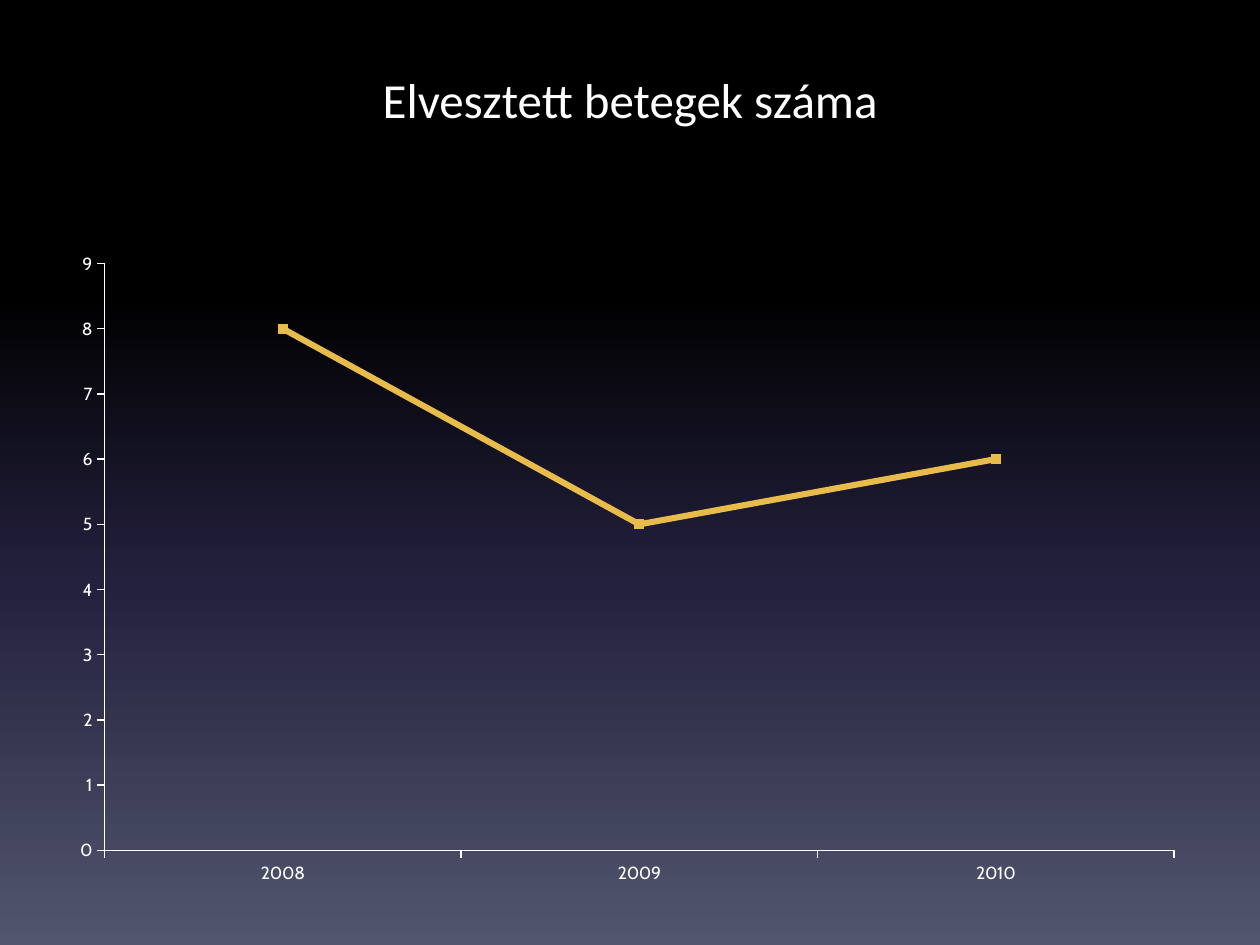
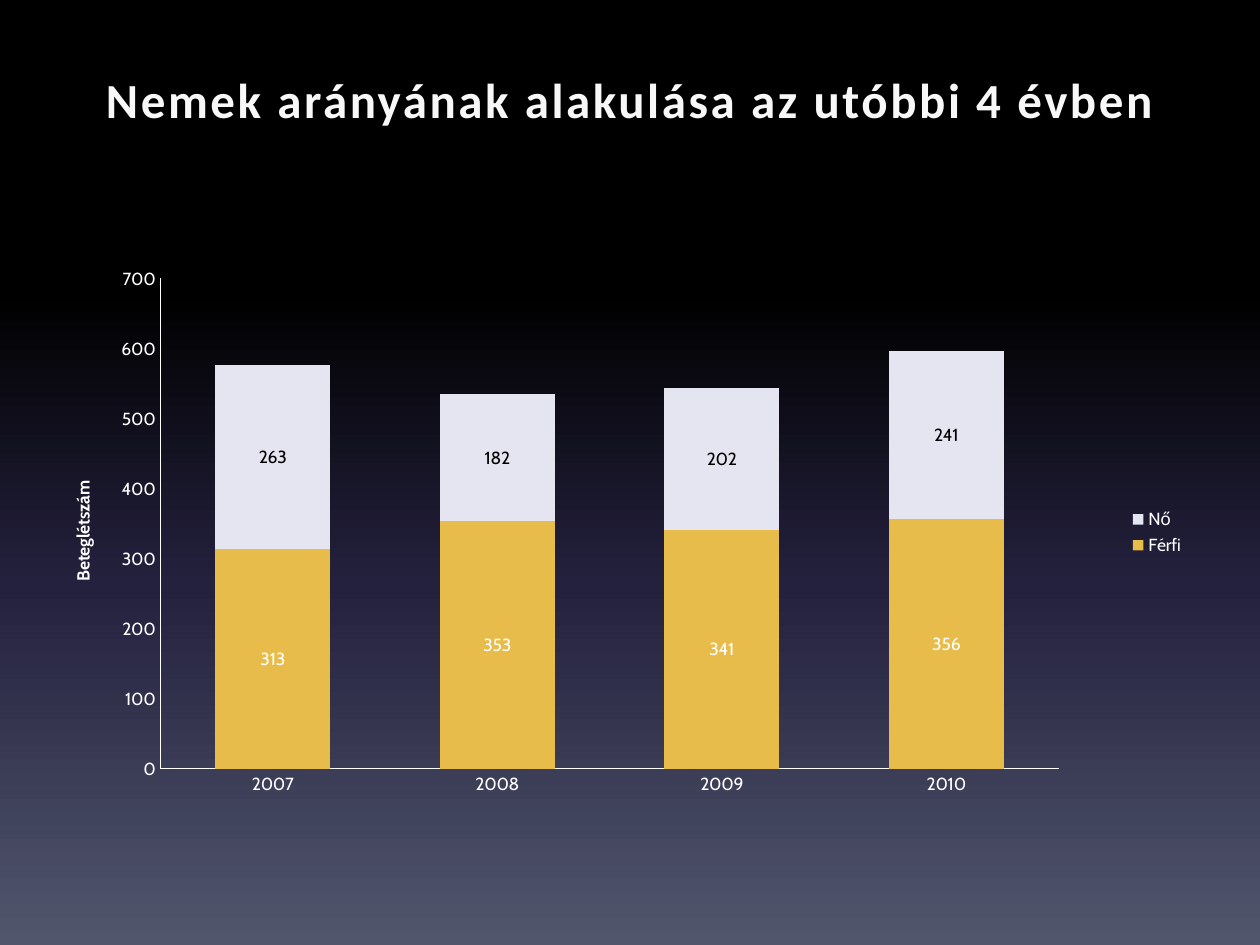
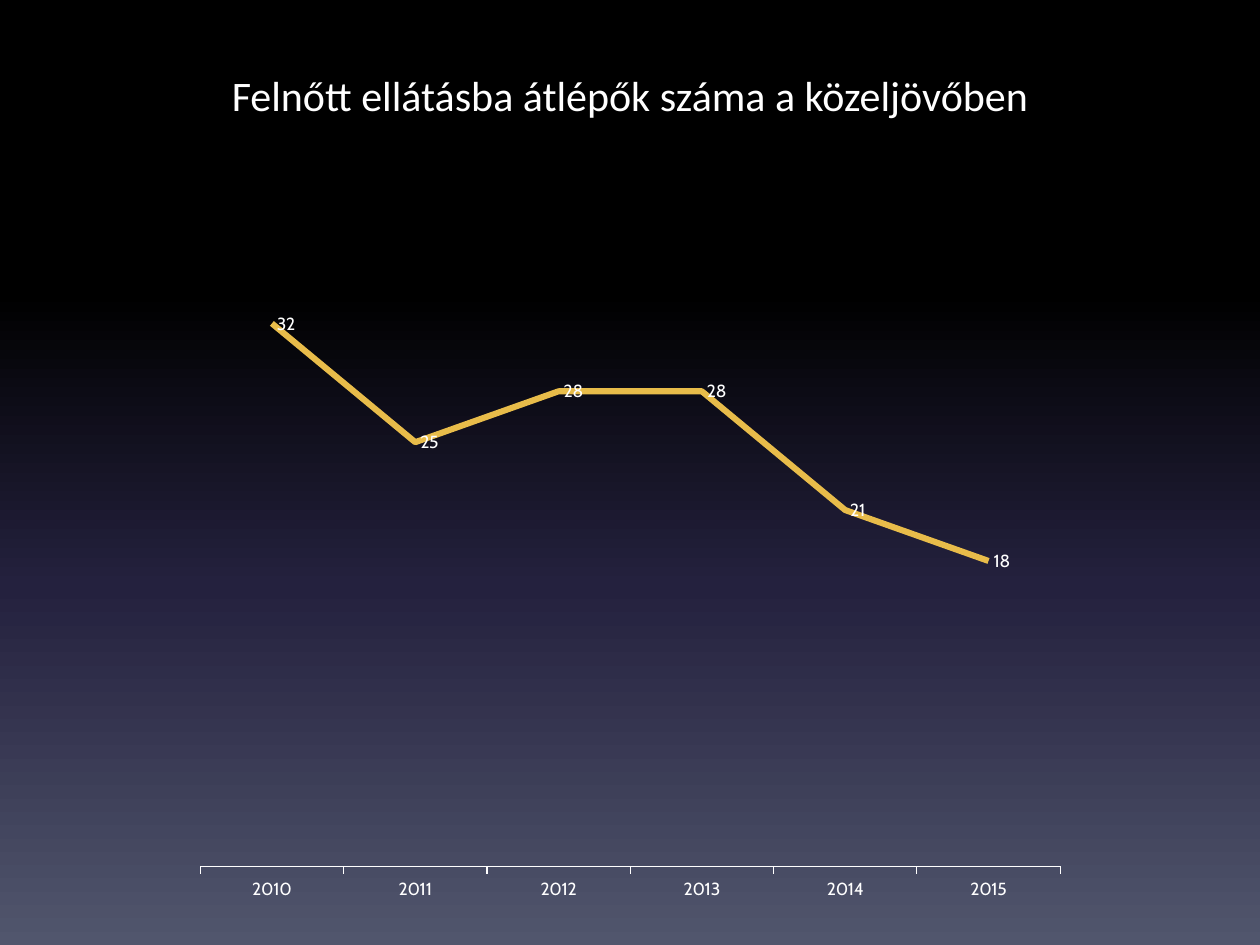
from dataclasses import dataclass

from lxml import etree
from pptx import Presentation
from pptx.chart.data import CategoryChartData
from pptx.dml.color import RGBColor
from pptx.enum.chart import (XL_CHART_TYPE, XL_LABEL_POSITION, XL_LEGEND_POSITION,
                             XL_MARKER_STYLE, XL_TICK_MARK)
from pptx.enum.text import MSO_ANCHOR, PP_ALIGN
from pptx.oxml.ns import qn
from pptx.util import Pt

LINE_MARKERS = XL_CHART_TYPE.LINE_MARKERS
LINE = XL_CHART_TYPE.LINE
STACKED = XL_CHART_TYPE.COLUMN_STACKED
TICK_OUT, TICK_NONE = XL_TICK_MARK.OUTSIDE, XL_TICK_MARK.NONE
LABEL_RIGHT, LABEL_CENTER = XL_LABEL_POSITION.RIGHT, XL_LABEL_POSITION.CENTER


@dataclass(frozen=True)
class Theme:
    white: str = "FFFFFF"
    off_white: str = "F8F8F8"
    black: str = "000000"
    gold: str = "E8BC4A"
    lavender: str = "E5E4F1"
    background: tuple = ((0, "000000"), (31, "000000"), (62, "24213E"), (100, "51566D"))
    title_font: str = "Calibri"
    chart_font: str = "Cabin"
    title_size: int = 28
    long_title_size: int = 24
    chart_size: int = 10
    axis_width: float = 0.75
    series_width: float = 3.5
    marker_size: int = 5


THEME = Theme()
SLIDE_SIZE = (720, 540)
TITLE_BOX = (36, 36, 648, 90)

# Content: boxes in points, plot areas as fractions of the chart.
# Each series is (name, values, fill colour, label colour or None).
SLIDES = [
    {
        "title": "Elvesztett betegek száma",
        "type": LINE_MARKERS, "box": (33.12, 137.5, 650.9, 375.1),
        "plot": (0.041, 0.035, 0.939, 0.894),
        "categories": range(2008, 2011), "maximum": 9, "step": 1,
        "series": [("Series 1", (8, 5, 6), THEME.gold, None)],
    },
    {
        "title": "Nemek arányának alakulása az utóbbi 4 évben",
        "title_color": THEME.off_white, "bold": True, "spacing": 1.5,
        "type": STACKED, "box": (36, 126, 648, 356.4),
        "plot": (0.086, 0.093, 0.792, 0.786),
        "categories": range(2007, 2011), "maximum": 700, "step": 100,
        "axis_title": "Beteglétszám",
        "series": [("Férfi", (313, 353, 341, 356), THEME.gold, THEME.white),
                   ("Nő", (263, 182, 202, 241), THEME.lavender, THEME.black)],
    },
    {
        "title": "Felnőtt ellátásba átlépők száma a közeljövőben",
        "title_size": THEME.long_title_size,
        "type": LINE, "box": (103.7, 148.3, 511.9, 373.7),
        "plot": (0.021, 0.02, 0.96, 0.908),
        "categories": range(2010, 2016), "maximum": 35, "step": 5,
        "hide_values": True,
        "series": [("Series 1", (32, 25, 28, 28, 21, 18), THEME.gold, THEME.white)],
    },
]


def color(value):
    return RGBColor.from_string(value)


def style_font(font, name, size, fill, bold=False):
    font.name, font.size, font.bold = name, Pt(size), bold
    font.color.rgb = color(fill)


def paint_background(master):
    fill = master.background.fill
    fill.gradient()
    fill.gradient_angle = 270
    stops = master.element.find(".//" + qn("a:gsLst"))
    for stop in list(stops):
        stops.remove(stop)
    for position, value in THEME.background:
        stop = etree.SubElement(stops, qn("a:gs"), pos=str(position * 1000))
        etree.SubElement(stop, qn("a:srgbClr"), val=value)


def write_title(slide, content):
    title = slide.shapes.title
    title.left, title.top, title.width, title.height = map(Pt, TITLE_BOX)
    title.text_frame.vertical_anchor = MSO_ANCHOR.TOP
    title.text_frame.text = content["title"]
    paragraph = title.text_frame.paragraphs[0]
    paragraph.alignment = PP_ALIGN.CENTER
    style_font(paragraph.font, THEME.title_font,
               content.get("title_size", THEME.title_size),
               content.get("title_color", THEME.white), content.get("bold", False))
    if "spacing" in content:
        properties = paragraph.runs[0].font._element
        properties.set("spc", str(int(content["spacing"] * 100)))


def place_plot(chart, fractions):
    area = chart._chartSpace.chart.plotArea
    for old in area.findall(qn("c:layout")):
        area.remove(old)
    layout = etree.Element(qn("c:layout"))
    area.insert(0, layout)
    manual = etree.SubElement(layout, qn("c:manualLayout"))
    settings = [("layoutTarget", "inner"), ("xMode", "edge"), ("yMode", "edge")]
    settings += zip("xywh", fractions)
    for tag, value in settings:
        etree.SubElement(manual, qn("c:" + tag), val=str(value))


def style_axes(chart, content):
    tick = TICK_NONE if content["type"] == STACKED else TICK_OUT
    for axis in (chart.category_axis, chart.value_axis):
        axis.has_major_gridlines = False
        axis.major_tick_mark, axis.minor_tick_mark = tick, TICK_NONE
        axis.format.line.color.rgb = color(THEME.white)
        axis.format.line.width = Pt(THEME.axis_width)
    values = chart.value_axis
    values.minimum_scale, values.maximum_scale = 0, content["maximum"]
    values.major_unit = content["step"]
    values.visible = not content.get("hide_values", False)
    if "axis_title" in content:
        frame = values.axis_title.text_frame
        frame.text = content["axis_title"]
        style_font(frame.paragraphs[0].font, THEME.chart_font, THEME.chart_size,
                   THEME.white, bold=True)


def style_series(series, chart_type, fill, label_color):
    if chart_type == STACKED:
        series.format.fill.solid()
        series.format.fill.fore_color.rgb = color(fill)
    else:
        series.smooth = False
        series.format.line.color.rgb = color(fill)
        series.format.line.width = Pt(THEME.series_width)
        marker = series.marker
        marker.style = XL_MARKER_STYLE.NONE
        if chart_type == LINE_MARKERS:
            marker.style = XL_MARKER_STYLE.SQUARE
            marker.size = THEME.marker_size
            marker.format.fill.solid()
            marker.format.fill.fore_color.rgb = color(fill)
            marker.format.line.color.rgb = color(fill)
    if label_color:
        labels = series.data_labels
        labels.show_value = True
        labels.position = LABEL_CENTER if chart_type == STACKED else LABEL_RIGHT
        style_font(labels.font, THEME.chart_font, THEME.chart_size, label_color)


def draw_chart(slide, content):
    data = CategoryChartData()
    data.categories = [str(year) for year in content["categories"]]
    for name, values, _, _ in content["series"]:
        data.add_series(name, values)
    chart_type = content["type"]
    chart = slide.shapes.add_chart(chart_type, *map(Pt, content["box"]), data).chart
    chart.has_title = False
    style_font(chart.font, THEME.chart_font, THEME.chart_size, THEME.white)
    place_plot(chart, content["plot"])
    style_axes(chart, content)

    plot = chart.plots[0]
    plot.vary_by_categories = False
    if chart_type == STACKED:
        plot.gap_width, plot.overlap = 95, 100
    for series, (_, _, fill, label_color) in zip(plot.series, content["series"]):
        style_series(series, chart_type, fill, label_color)

    chart.has_legend = len(content["series"]) > 1
    if chart.has_legend:
        chart.legend.position = XL_LEGEND_POSITION.RIGHT
        chart.legend.include_in_layout = False


def main():
    presentation = Presentation()
    presentation.slide_width, presentation.slide_height = map(Pt, SLIDE_SIZE)
    paint_background(presentation.slide_master)
    title_only = presentation.slide_layouts[5]
    for content in SLIDES:
        slide = presentation.slides.add_slide(title_only)
        write_title(slide, content)
        draw_chart(slide, content)
    presentation.save("out.pptx")


if __name__ == "__main__":
    main()
